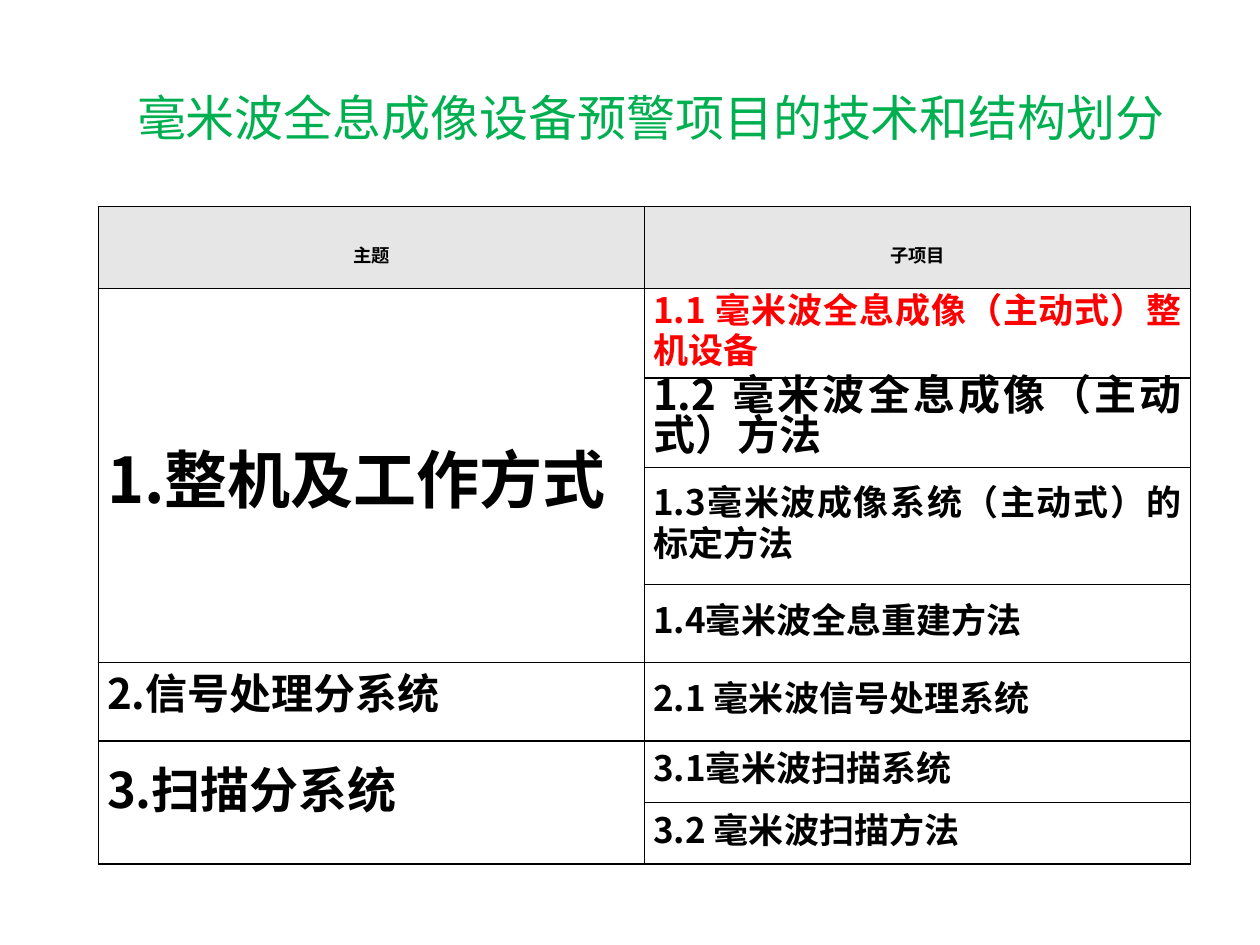
from lxml.etree import SubElement
from pptx import Presentation
from pptx.dml.color import RGBColor
from pptx.enum.text import MSO_ANCHOR, PP_ALIGN
from pptx.oxml.ns import qn
from pptx.util import Inches, Pt

FONT = "Noto Sans CJK SC"
ROW_HEIGHTS = [0.65, 0.71, 0.71, 0.93, 0.62, 0.62, 0.49, 0.49]
HEADERS = ["主题", "子项目"]
# Each topic: text, size, line spacing in points, and its (text, size, colour) subprojects
TOPICS = [
    ("1.整机及工作方式", 36, None, [
        ("1.1 毫米波全息成像（主动式）整机设备", 20, "FF0000"),
        ("1.2 毫米波全息成像（主动式）方法", 24, "000000"),
        ("1.3毫米波成像系统（主动式）的标定方法", 20, "000000"),
        ("1.4毫米波全息重建方法", 20, "000000"),
    ]),
    ("2.信号处理分系统", 24, 23, [("2.1 毫米波信号处理系统", 20, "000000")]),
    ("3.扫描分系统", 28, 23, [
        ("3.1毫米波扫描系统", 20, "000000"),
        ("3.2 毫米波扫描方法", 20, "000000"),
    ]),
]


def color(value):
    return RGBColor.from_string(value)


def set_attributes(target, values):
    for name, value in values.items():
        setattr(target, name, value)


def write_paragraph(paragraph, text, size, hex_color, font_name, bold, align):
    paragraph.alignment = align
    run = paragraph.add_run()
    run.text = text
    set_attributes(run.font, {"size": Pt(size), "bold": bold, "name": font_name})
    run.font.color.rgb = color(hex_color)
    SubElement(run.font._element, qn("a:ea"), typeface=FONT)


def add_title(slide, text, left, top, width, height):
    title = slide.shapes.title
    set_attributes(title, {"left": left, "top": top, "width": width, "height": height})
    title.text_frame.vertical_anchor = MSO_ANCHOR.MIDDLE
    paragraph = title.text_frame.paragraphs[0]
    write_paragraph(paragraph, text, 28, "00B050", "Arial", False, PP_ALIGN.CENTER)
    paragraph._p.get_or_add_pPr().set("indent", str(Inches(0.33)))


def style_cell(cell, fill=None):
    """Set margins, black borders and an optional fill."""
    set_attributes(cell, {
        "margin_left": Inches(0.07), "margin_right": Inches(0.07),
        "margin_top": 0, "margin_bottom": 0,
        "vertical_anchor": MSO_ANCHOR.MIDDLE,
    })
    properties = cell._tc.get_or_add_tcPr()
    for side in ("lnL", "lnR", "lnT", "lnB"):
        line = SubElement(properties, qn(f"a:{side}"), w=str(Pt(1)))
        solid = SubElement(line, qn("a:solidFill"))
        SubElement(solid, qn("a:srgbClr"), val="000000")
    if fill:
        cell.fill.solid()
        cell.fill.fore_color.rgb = color(fill)
    else:
        cell.fill.background()


def write_cell(cell, text, size, hex_color="000000", spacing=23, align=PP_ALIGN.JUSTIFY):
    paragraph = cell.text_frame.paragraphs[0]
    write_paragraph(paragraph, text, size, hex_color, FONT, True, align)
    if spacing:
        paragraph.line_spacing = Pt(spacing)


def add_project_table(slide, left, top, width, height):
    frame = slide.shapes.add_table(len(ROW_HEIGHTS), len(HEADERS), left, top, width, height)
    table = frame.table
    for row, row_height in zip(table.rows, ROW_HEIGHTS):
        row.height = Inches(row_height)
    for row_index in range(len(ROW_HEIGHTS)):
        for column in range(len(HEADERS)):
            style_cell(table.cell(row_index, column), None if row_index else "E6E6E6")

    for column, header in enumerate(HEADERS):
        write_cell(table.cell(0, column), header, 10.5, align=PP_ALIGN.CENTER)
    first = 1
    for topic, size, spacing, subprojects in TOPICS:
        last = first + len(subprojects) - 1
        topic_cell = table.cell(first, 0)
        if last > first:
            topic_cell.merge(table.cell(last, 0))
        write_cell(topic_cell, topic, size, spacing=spacing)
        for row_index, subproject in enumerate(subprojects, first):
            write_cell(table.cell(row_index, 1), *subproject)
        first = last + 1


def main():
    presentation = Presentation()
    set_attributes(presentation, {"slide_width": Inches(10), "slide_height": Inches(7.5)})
    slide = presentation.slides.add_slide(presentation.slide_layouts[5])
    add_title(slide, "毫米波全息成像设备预警项目的技术和结构划分",
              Inches(0.5), Inches(0.3), Inches(9), Inches(1.25))
    add_project_table(slide, Inches(0.78), Inches(1.64), Inches(8.67), Inches(5.23))
    presentation.save("out.pptx")


if __name__ == "__main__":
    main()
